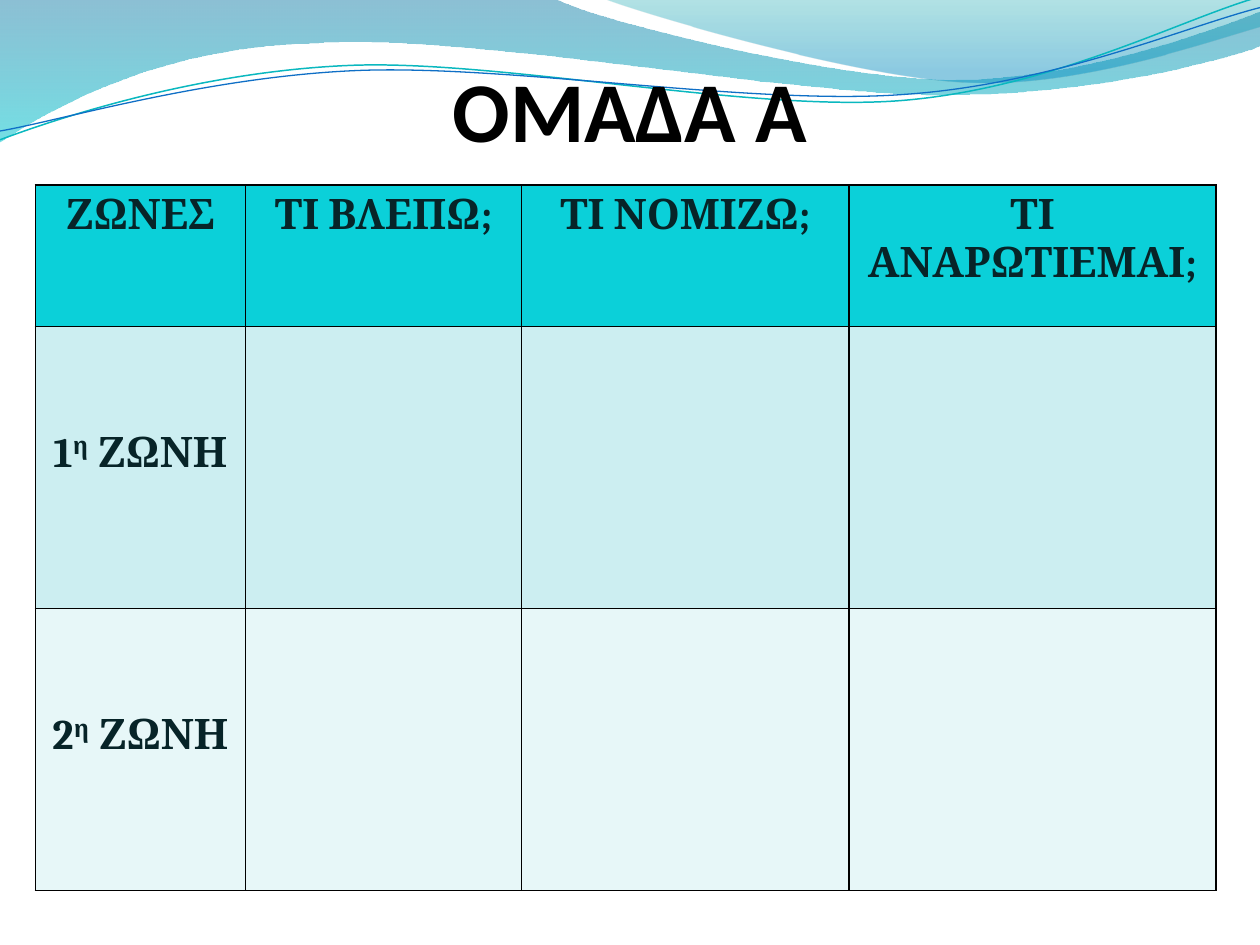
from math import cos, radians, sin

from lxml import etree
from pptx import Presentation
from pptx.dml.color import RGBColor
from pptx.enum.text import MSO_ANCHOR, MSO_AUTO_SIZE, PP_ALIGN
from pptx.oxml.ns import qn
from pptx.util import Inches, Pt

COLORS = {"black": "000000", "text": "072428", "header": "0BD0D9",
          "zone1": "CCEEF1", "zone2": "E7F7F8",
          "teal_line": "0AB8BF", "blue_line": "0F6FC6",
          "deep_blue": "0074A1", "aqua": "00C6CF",
          "teal": "00A1A9", "sky": "008BBF"}
RGB = {name: RGBColor.from_string(value) for name, value in COLORS.items()}


def add_wave(shapes, box, start, segments, close, rotation=0):
    """Draw a freeform in box; a segment is an end point or a cubic (two controls, end).

    Points are slide inches as seen after the rotation.
    """
    left, top, width, height = box
    cx, cy = left + width / 2, top + height / 2
    angle = radians(-rotation)

    def local(x, y):
        dx, dy = x - cx, y - cy
        return (Inches(dx * cos(angle) - dy * sin(angle) + width / 2),
                Inches(dx * sin(angle) + dy * cos(angle) + height / 2))

    fb = shapes.build_freeform(*local(*start), scale=1.0)
    fb.add_line_segments([local(*seg[-2:]) for seg in segments], close=close)
    sp = fb.convert_to_shape()
    sp.left, sp.top, sp.width, sp.height = (Inches(v) for v in box)
    sp.rotation = rotation
    sp.shadow.inherit = False

    outline = next(sp._element.iter(qn("a:path")))
    outline.set("w", str(sp.width))
    outline.set("h", str(sp.height))
    for step, seg in zip(outline, [start] + segments):
        if len(seg) == 6:
            step.tag = qn("a:cubicBezTo")
        for pt in list(step):
            step.remove(pt)
        for i in range(0, len(seg), 2):
            x, y = local(*seg[i:i + 2])
            etree.SubElement(step, qn("a:pt"), x=str(x), y=str(y))
    return sp


def set_borders(cell, color, width):
    tcPr = cell._tc.get_or_add_tcPr()
    for i, side in enumerate(("lnL", "lnR", "lnT", "lnB")):
        ln = etree.Element(qn(f"a:{side}"), w=str(width))
        fill = etree.SubElement(ln, qn("a:solidFill"))
        etree.SubElement(fill, qn("a:srgbClr"), val=color)
        tcPr.insert(i, ln)


prs = Presentation()
prs.slide_width, prs.slide_height = Inches(10), Inches(7.5)
s = prs.slides.add_slide(prs.slide_layouts[5])

# Wave bands: box, start, segments, gradient stops (colour, position, opacity %)
bands = [
    ((-0.01, -0.01, 10.02, 1.14), (0, 0),
     [(4.4, -0.01), (4.76, 0.17, 6.64, 0.63, 7.58, 0.63),
      (8.53, 0.63, 9.58, 0.26, 10, 0.09), (10.01, 0.36),
      (9.83, 0.44, 8.7, 0.76, 7.46, 0.75), (6.22, 0.75, 3.82, 0.28, 2.57, 0.34),
      (1.29, 0.36, 0.46, 0.83, -0.01, 1.13), (0, 0)],
     [("deep_blue", 0, 45), ("aqua", 1, 55)]),
    ((4.79, -0.01, 5.21, 0.7), (4.79, -0.01),
     [(5.09, 0.11, 6.82, 0.62, 7.69, 0.65), (8.56, 0.69, 9.61, 0.32, 10, 0.21),
      (10, 0), (4.79, -0.01)],
     [("teal", 0, 30), ("sky", 0.8, 45)]),
]
for box, start, segments, stops in bands:
    sp = add_wave(s.shapes, box, start, segments, close=True)
    sp.line.fill.background()
    sp.fill.gradient()
    sp.fill.gradient_angle = 270
    for stop, (color, position, opacity) in zip(sp.fill.gradient_stops, stops):
        stop.color.rgb = RGB[color]
        stop.position = position
        clr = stop._gs.find(qn("a:srgbClr"))
        etree.SubElement(clr, qn("a:alpha"), val=str(opacity * 1000))

# Thin wave lines
lines = [
    ((-0.02, 0.22, 10.02, 0.71), (0, 1.11),
     [(0.48, 0.93, 1.58, 0.57, 2.77, 0.52), (3.95, 0.47, 5.93, 0.89, 7.13, 0.8),
      (8.33, 0.71, 9.38, 0.15, 9.98, -0.02)], "teal_line", 0.85),
    ((-0.02, 0.3, 10.03, 0.58), (0, 1.04),
     [(0.47, 0.96, 1.64, 0.61, 2.83, 0.56), (4.03, 0.51, 5.97, 0.84, 7.17, 0.75),
      (8.36, 0.67, 9.41, 0.21, 10, 0.06)], "blue_line", 0.75),
]
for box, start, segments, color, width in lines:
    sp = add_wave(s.shapes, box, start, segments, close=False, rotation=357.3)
    sp.fill.background()
    sp.line.color.rgb = RGB[color]
    sp.line.width = Pt(width)

# Title, in front of the waves
title = s.shapes.title
s.shapes._spTree.append(title._element)
title.left, title.top = Inches(0.5), Inches(0.77)
title.width, title.height = Inches(9), Inches(1.25)
tf = title.text_frame
tf.text = "ΟΜΑΔΑ Α"
tf.auto_size = MSO_AUTO_SIZE.NONE
tf.vertical_anchor = MSO_ANCHOR.BOTTOM
tf.margin_left = tf.margin_right = 0
tf.margin_bottom = Inches(0.75)
p = tf.paragraphs[0]
p.alignment = PP_ALIGN.CENTER
p.font.name, p.font.size, p.font.bold = "Calibri", Pt(48.6), True
p.font.color.rgb = RGB["black"]

# Table: each cell is a list of (text, is_superscript) runs
headers = ["ΖΩΝΕΣ", "ΤΙ ΒΛΕΠΩ;", "ΤΙ ΝΟΜΙΖΩ;", "ΤΙ ΑΝΑΡΩΤΙΕΜΑΙ;"]
rows = [("header", 1.12, [[(h, False)] for h in headers])]
for n in (1, 2):
    zone = [(str(n), False), ("η", True), (" ΖΩΝΗ", False)]
    rows.append((f"zone{n}", 2.24, [zone, [], [], []]))

table = s.shapes.add_table(3, 4, Inches(0.28), Inches(1.47),
                           Inches(9.37), Inches(5.6)).table
for col, width in zip(table.columns, (1.67, 2.19, 2.6, 2.91)):
    col.width = Inches(width)
for r, (fill, height, cells) in enumerate(rows):
    table.rows[r].height = Inches(height)
    for c, runs in enumerate(cells):
        cell = table.cell(r, c)
        cell.fill.solid()
        cell.fill.fore_color.rgb = RGB[fill]
        set_borders(cell, COLORS["black"], Pt(1))
        if r and runs:
            cell.margin_top = Inches(0.82)
        p = cell.text_frame.paragraphs[0]
        p.alignment = PP_ALIGN.CENTER
        p.font.name, p.font.size, p.font.bold = "Cambria", Pt(24), True
        p.font.color.rgb = RGB["text"]
        for text, is_superscript in runs:
            run = p.add_run()
            run.text = text
            if is_superscript:
                run.font._element.set("baseline", "30000")

prs.save("out.pptx")
